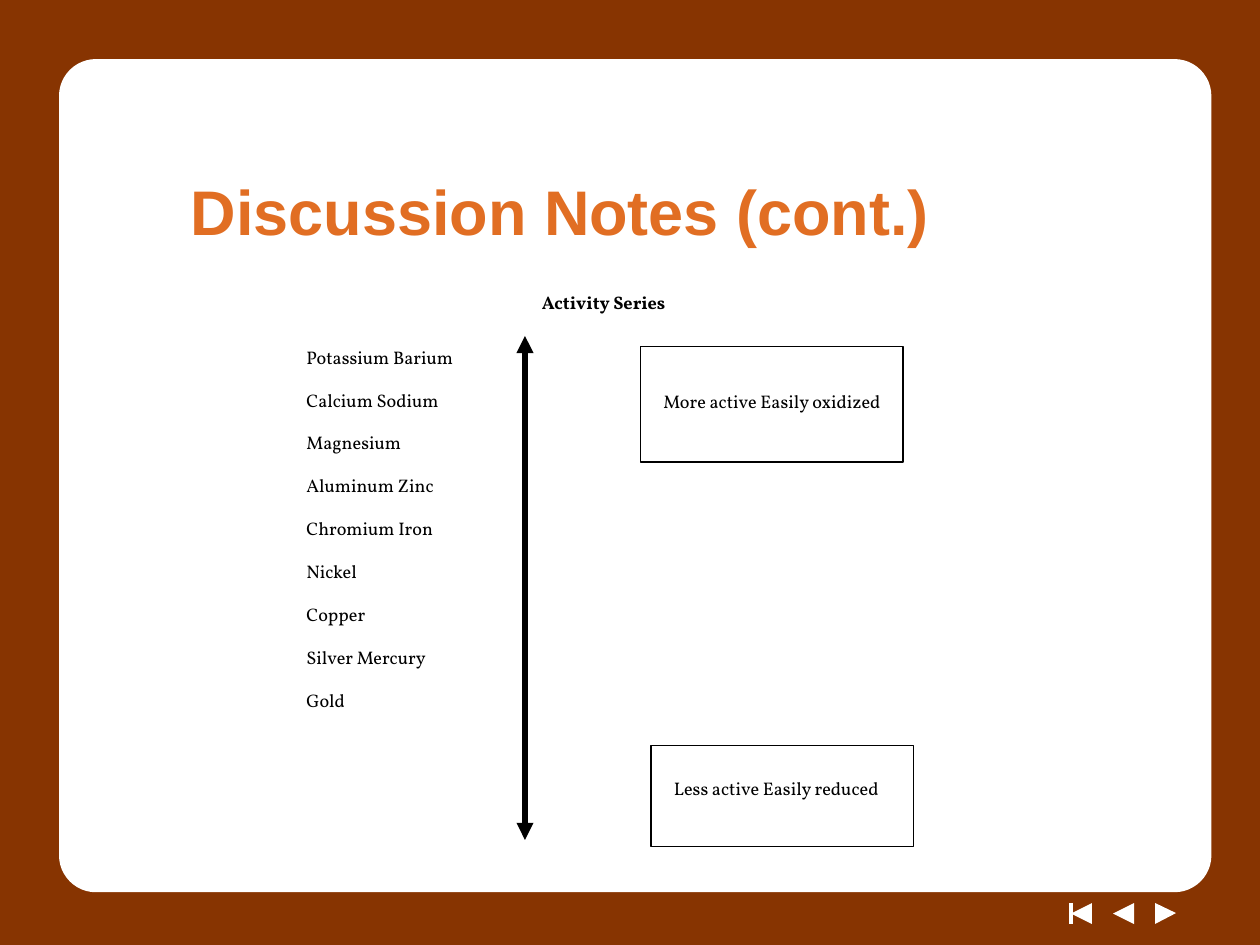
from pptx import Presentation
from pptx.util import Pt
from pptx.dml.color import RGBColor
from pptx.enum.shapes import MSO_CONNECTOR, MSO_SHAPE
from pptx.enum.text import MSO_ANCHOR, MSO_AUTO_SIZE, PP_ALIGN
from pptx.oxml.ns import qn
from lxml import etree

RECT, ROUND, TRIANGLE = MSO_SHAPE.RECTANGLE, MSO_SHAPE.ROUNDED_RECTANGLE, MSO_SHAPE.ISOSCELES_TRIANGLE
STRAIGHT = MSO_CONNECTOR.STRAIGHT
TOP, MIDDLE = MSO_ANCHOR.TOP, MSO_ANCHOR.MIDDLE
GROW, FIXED = MSO_AUTO_SIZE.SHAPE_TO_FIT_TEXT, MSO_AUTO_SIZE.NONE
LEFT, CENTER = PP_ALIGN.LEFT, PP_ALIGN.CENTER
BROWN, ORANGE, WHITE, BLACK = "873401", "E16E23", "FFFFFF", "000000"


def rgb(value):
    return RGBColor.from_string(value)


prs = Presentation()
prs.slide_width, prs.slide_height = Pt(720), Pt(540)
s = prs.slides.add_slide(prs.slide_layouts[6])

# Frame, navigation triangles, panel and the two label boxes
# kind, left, top, width, height, fill, line colour, line width, rotation, adjustment
shapes = [
    (RECT, 0, 0, 720, 540, BROWN, None, 0, 0, None),
    (TRIANGLE, 660, 516, 12, 12, WHITE, None, 0, 90, 0.48),
    (TRIANGLE, 636, 516, 12, 12, WHITE, None, 0, 270, 0.5),
    (TRIANGLE, 612, 516, 12, 12, WHITE, None, 0, 270, 0.5),
    (ROUND, 36, 36, 654, 471.6, WHITE, WHITE, 4.5, 0, 0.04),
    (RECT, 366, 198, 150, 66, None, BLACK, 0.75, 0, None),
    (RECT, 372, 426, 150, 57.6, None, BLACK, 0.75, 0, None),
]
for kind, x, y, w, h, fill, line, weight, turn, adjust in shapes:
    sp = s.shapes.add_shape(kind, Pt(x), Pt(y), Pt(w), Pt(h))
    sp.shadow.inherit = False
    sp.rotation = turn
    if adjust is not None:
        sp.adjustments[0] = adjust
    if fill:
        sp.fill.solid()
        sp.fill.fore_color.rgb = rgb(fill)
    else:
        sp.fill.background()
    if line:
        sp.line.color.rgb = rgb(line)
        sp.line.width = Pt(weight)
    else:
        sp.line.fill.background()

# Bar of the "first" button and the double-headed activity arrow
for x, y1, y2, color, weight, ends in [
    (612, 516, 528, WHITE, 2, ()),
    (300, 192, 480, BLACK, 3.25, ("a:headEnd", "a:tailEnd")),
]:
    line = s.shapes.add_connector(STRAIGHT, Pt(x), Pt(y1), Pt(x), Pt(y2))
    line.line.color.rgb = rgb(color)
    line.line.width = Pt(weight)
    for end in ends:
        etree.SubElement(line.line._get_or_add_ln(), qn(end), type="triangle")
    etree.SubElement(line._element.spPr, qn("a:effectLst"))

# Texts: the body texts are set as subscript, which draws them smaller
title_font = {"name": "Arial", "size": Pt(36), "bold": True}
body_font = {"name": "Vollkorn", "size": Pt(18), "bold": False}
heading_font = {**body_font, "bold": True}
metals = ("Potassium Barium Calcium Sodium Magnesium Aluminum Zinc Chromium Iron"
          "\vNickel\vCopper\vSilver Mercury\vGold")
texts = [
    ("Discussion Notes (cont.)", 102, 84, 582, 72, title_font, ORANGE, LEFT, MIDDLE, FIXED, None),
    (metals, 168, 182, 114, 310, body_font, BLACK, LEFT, TOP, GROW, "-25000"),
    ("More active Easily oxidized", 372, 207.5, 150, 50, body_font, BLACK, LEFT, TOP, GROW, "-25000"),
    ("Less active Easily reduced", 378, 428.5, 150, 50, body_font, BLACK, LEFT, TOP, GROW, "-25000"),
    ("Activity Series", 174, 151, 342, 29, heading_font, BLACK, CENTER, TOP, GROW, "-25000"),
]
for text, x, y, w, h, font, color, align, anchor, fit, baseline in texts:
    tf = s.shapes.add_textbox(Pt(x), Pt(y), Pt(w), Pt(h)).text_frame
    tf.word_wrap = True
    tf.auto_size = fit
    tf.vertical_anchor = anchor
    p = tf.paragraphs[0]
    p.text = text
    p.alignment = align
    for r in p.runs:
        for key, value in font.items():
            setattr(r.font, key, value)
        r.font.color.rgb = rgb(color)
        if baseline:
            r._r.get_or_add_rPr().set("baseline", baseline)

prs.save("out.pptx")
